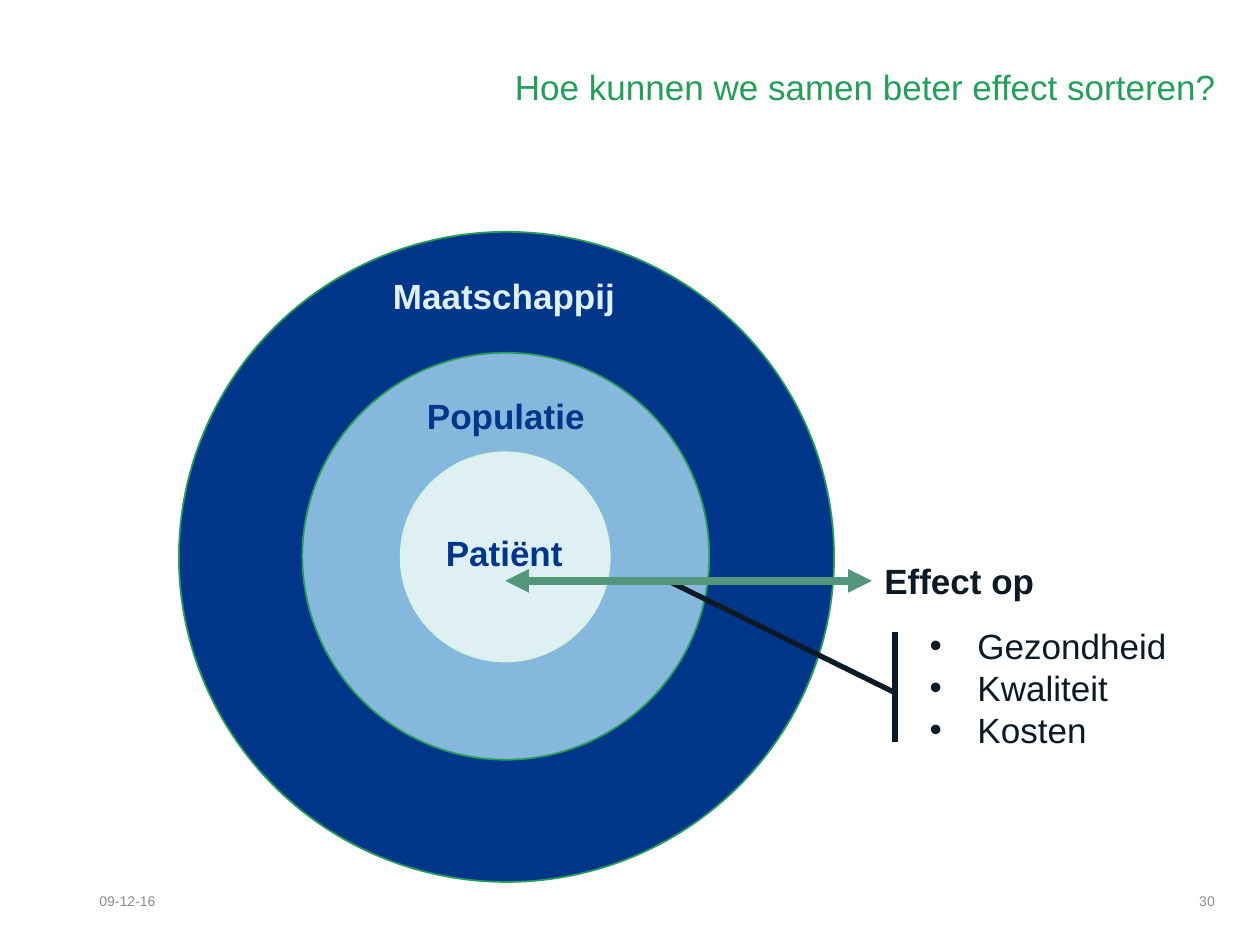
from dataclasses import dataclass

from lxml import etree
from pptx import Presentation
from pptx.dml.color import RGBColor
from pptx.enum.shapes import MSO_CONNECTOR, MSO_SHAPE
from pptx.enum.text import MSO_ANCHOR, MSO_AUTO_SIZE, PP_ALIGN
from pptx.oxml.ns import qn
from pptx.util import Inches, Pt

OVAL = MSO_SHAPE.OVAL
CALLOUT = MSO_SHAPE.LINE_CALLOUT_1_ACCENT_BAR
STRAIGHT = MSO_CONNECTOR.STRAIGHT
LEFT, RIGHT = PP_ALIGN.LEFT, PP_ALIGN.RIGHT
TOP, MIDDLE = MSO_ANCHOR.TOP, MSO_ANCHOR.MIDDLE
GROW = MSO_AUTO_SIZE.SHAPE_TO_FIT_TEXT


@dataclass(frozen=True)
class Theme:
    font: str = "Arial"
    body: int = 20
    small: int = 8
    green: str = "259E5A"
    gray: str = "8C8C8C"
    navy: str = "00368A"
    blue: str = "85B8DC"
    pale: str = "DFF0F4"
    mint: str = "D7F5E4"
    ink: str = "0B1A24"
    arrow: str = "53967C"


THEME = Theme()


def color(code):
    return RGBColor.from_string(code)


def set_line(shape, code, width):
    shape.line.color.rgb = color(code)
    shape.line.width = Pt(width)


def add_bullet(para, indent):
    props = para._p.get_or_add_pPr()
    props.set("marL", str(Inches(indent)))
    props.set("indent", str(-Inches(indent)))
    etree.SubElement(props, qn("a:buFont")).set("typeface", THEME.font)
    etree.SubElement(props, qn("a:buChar")).set("char", "•")


def write(frame, text, *, size=THEME.body, code=THEME.ink, bold=False,
          align=LEFT, anchor=TOP, wrap=True, spacing=None, indent=None):
    """Fill a text frame, one paragraph per line of text."""
    frame.word_wrap = wrap
    frame.vertical_anchor = anchor
    for i, line in enumerate(text.split("\n")):
        para = frame.add_paragraph() if i else frame.paragraphs[0]
        para.alignment = align
        if spacing:
            para.line_spacing = spacing
        if indent:
            add_bullet(para, indent)
        run = para.add_run()
        run.text = line
        font = run.font
        font.name, font.size, font.bold = THEME.font, Pt(size), bold
        font.color.rgb = color(code)


def add_text(slide, box, text, **style):
    frame = slide.shapes.add_textbox(*map(Inches, box)).text_frame
    write(frame, text, **style)
    return frame


def add_label(slide, left, top, width, text, code):
    frame = add_text(slide, (left, top, width, 0.44), text,
                     code=code, bold=True, wrap=False)
    frame.auto_size = GROW


def add_ring(slide, box, fill, edge):
    ring = slide.shapes.add_shape(OVAL, *map(Inches, box))
    ring.shadow.inherit = False
    ring.fill.solid()
    ring.fill.fore_color.rgb = color(fill)
    set_line(ring, edge, 1)


def add_callout(slide, box, text, points):
    note = slide.shapes.add_shape(CALLOUT, *map(Inches, box))
    note.shadow.inherit = False
    for i, value in enumerate(points):
        note.adjustments[i] = value
    note.fill.background()
    set_line(note, THEME.ink, 3)
    write(note.text_frame, text, anchor=MIDDLE, indent=0.38)


def add_arrow(slide, start, end, code, width):
    arrow = slide.shapes.add_connector(STRAIGHT, *map(Inches, start + end))
    set_line(arrow, code, width)
    for tag in ("a:headEnd", "a:tailEnd"):
        etree.SubElement(arrow.line._ln, qn(tag)).set("type", "triangle")
    etree.SubElement(arrow._element.spPr, qn("a:effectLst"))


def main():
    deck = Presentation()
    deck.slide_width, deck.slide_height = Inches(10), Inches(7.5)
    slide = deck.slides.add_slide(deck.slide_layouts[6])

    # Title and footer
    add_text(slide, (3.41, 0.51, 6.34, 1.34),
             "Hoe kunnen we samen beter effect sorteren?",
             code=THEME.green, align=RIGHT, spacing=0.9)
    foot = {"size": THEME.small, "code": THEME.gray, "anchor": MIDDLE}
    add_text(slide, (0.69, 6.95, 2.25, 0.4), "09-12-16", **foot)
    add_text(slide, (7.06, 6.95, 2.68, 0.4), "30", align=RIGHT, **foot)

    # Rings, from the outside in
    for box, fill, edge in (
        ((1.42, 1.84, 5.2, 5.16), THEME.navy, THEME.green),
        ((2.4, 2.8, 3.23, 3.23), THEME.blue, THEME.green),
        ((3.18, 3.59, 1.66, 1.66), THEME.pale, THEME.mint),
    ):
        add_ring(slide, box, fill, edge)

    # Labels
    for label in (
        (3.44, 4.17, 1.14, "Patiënt", THEME.navy),
        (3.29, 3.08, 1.46, "Populatie", THEME.navy),
        (3.02, 2.13, 1.98, "Maatschappij", THEME.pale),
        (6.92, 4.39, 1.4, "Effect op", THEME.ink),
    ):
        add_label(slide, *label)

    # Effects and the arrow across the rings
    add_callout(slide, (7.28, 5.02, 2.93, 0.87),
                "Gezondheid\nKwaliteit\nKosten",
                (0.55, -0.06, -0.48, -0.68))
    add_arrow(slide, (4.01, 4.61), (6.92, 4.61), THEME.arrow, 4.5)

    deck.save("out.pptx")


if __name__ == "__main__":
    main()
